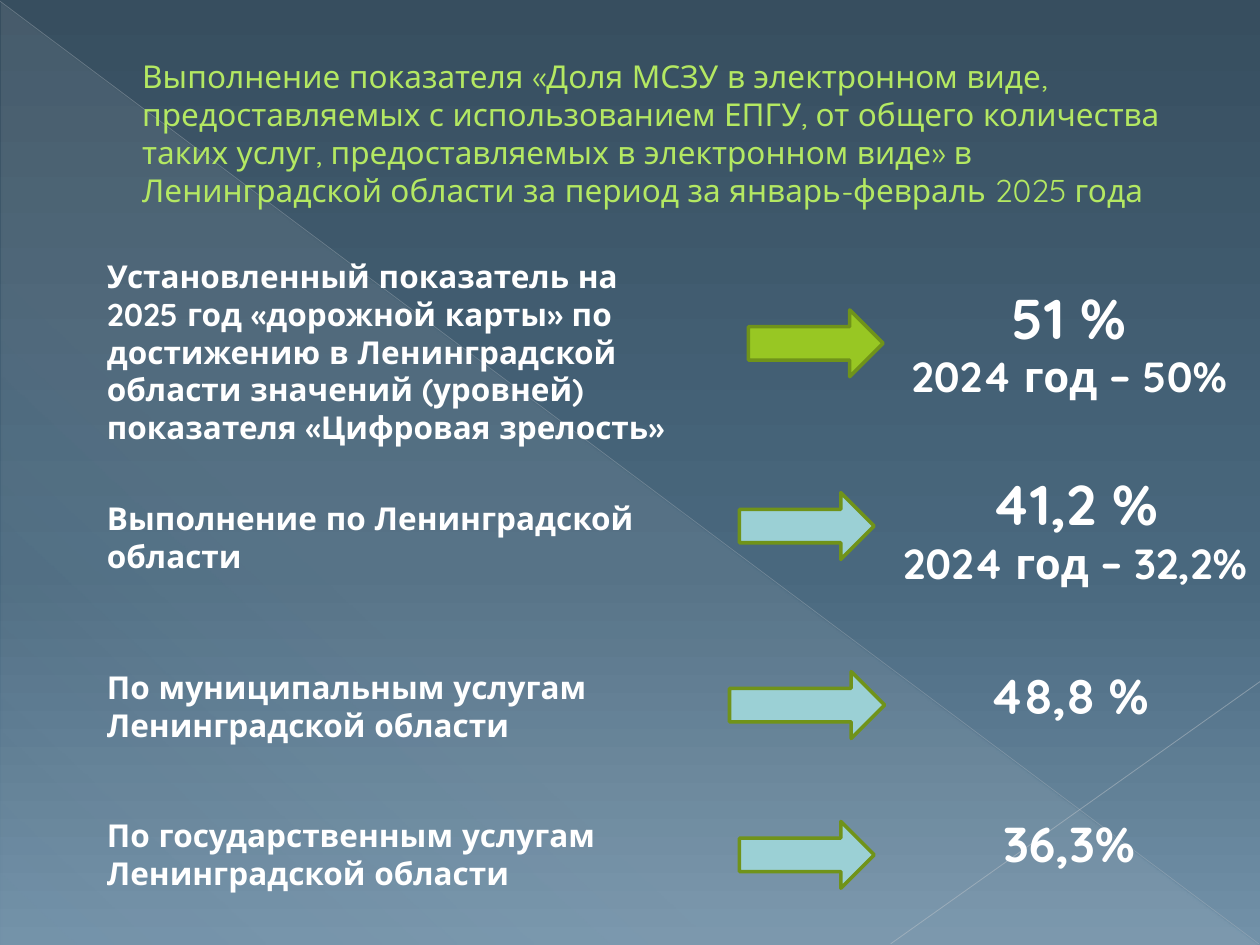
"""Build the slide on the share of e-services in the region."""
from lxml.etree import SubElement as Sub
from pptx import Presentation
from pptx.dml.color import RGBColor as RGB
from pptx.enum.shapes import MSO_CONNECTOR as Link, MSO_SHAPE as Kind
from pptx.enum.text import MSO_ANCHOR as Anchor, MSO_AUTO_SIZE as Fit, PP_ALIGN as Align
from pptx.oxml.ns import qn
from pptx.util import Pt

FONT = "Quicksand"
WHITE, LIME = RGB(255, 255, 255), RGB(0xB4, 0xE8, 0x62)
GREEN, AQUA = RGB(0x98, 0xC7, 0x23), RGB(0x9B, 0xD0, 0xD5)
OLIVE, MOSS = RGB(0x70, 0x93, 0x1A), RGB(0x69, 0x8A, 0x18)
DARK, STEEL, SKY = RGB(0x37, 0x4E, 0x5F), RGB(0x49, 0x68, 0x7E), RGB(0x72, 0x91, 0xA8)
MIST, GREY, PALE = RGB(0xE7, 0xEC, 0xED), RGB(0xBA, 0xC0, 0xC6), RGB(0xC2, 0xC7, 0xCC)

TITLE = ("Выполнение показателя «Доля МСЗУ в электронном виде, предоставляемых "
         "с использованием ЕПГУ, от общего количества таких услуг, предоставляемых "
         "в электронном виде» в Ленинградской области за период за январь-февраль 2025 года")
BACK = [(0, DARK, 100), (60, STEEL, 100), (100, SKY, 100)]
SHINE = [(0, MIST, 10), (70, MIST, 8), (100, MIST, 1)]
LINES = [((0, 0.7, 719.3, 539.3), GREY, 0.39, 35),
         ((720, 389.5, 509, 539.3), PALE, 0.47, 45)]
ROWS = [
    ("Установленный показатель на 2025 год «дорожной карты» по достижению в "
     "Ленинградской области значений (уровней) показателя «Цифровая зрелость»",
     (54, 143.3, 339.8, 116.6), (427.7, 177.1, 77), GREEN,
     [("51 %", 32), ("2024 год – 50%", 24)], (504.7, 158.4, 212.4, 74.9)),
    ("Выполнение по Ленинградской области",
     (54, 281.5, 317.5, 51.1), (422.6, 281.5, 77), AQUA,
     [("41,2 %", 32), ("2024 год – 32,2%", 24)], (506.2, 265, 216, 113.8)),
    ("По муниципальным услугам Ленинградской области",
     (54, 378, 317.5, 51.1), (416.9, 383.8, 88.6), AQUA,
     [("48,8 %", 28)], (504.7, 376.6, 212.4, 41)),
    ("По государственным услугам Ленинградской области",
     (54, 463, 311.8, 51.1), (422.6, 469.4, 77), AQUA,
     [("36,3%", 28)], (504.7, 461.5, 212.4, 74.9)),
]


def pts(box):
    return [Pt(v) for v in box]


def tint(node, color, alpha):
    clr = Sub(node, qn("a:srgbClr"), val=str(color))
    if alpha < 100:
        Sub(clr, qn("a:alpha"), val=str(alpha * 1000))


def blend(root, stops, angle):
    old = root.find(".//" + qn("a:solidFill"))
    old.tag
    home = old.getparent()
    grad = Sub(home, qn("a:gradFill"), rotWithShape="1")
    home.replace(old, grad)
    group = Sub(grad, qn("a:gsLst"))
    for pos, color, alpha in stops:
        tint(Sub(group, qn("a:gs"), pos=str(pos * 1000)), color, alpha)
    Sub(grad, qn("a:lin"), ang=str(angle * 60000), scaled="0")


def add_line(slide, ends, color, width, alpha):
    line = slide.shapes.add_connector(Link.STRAIGHT, *pts(ends))
    line.line.width = Pt(width)
    line.line.color.rgb = color
    props = line._element.spPr
    clr = props.find(".//" + qn("a:srgbClr"))
    Sub(clr, qn("a:alpha"), val=str(alpha * 1000))
    Sub(props, qn("a:effectLst"))


def add_form(slide, kind, box, color):
    form = slide.shapes.add_shape(kind, *pts(box))
    form.shadow.inherit = False
    form.fill.solid()
    form.fill.fore_color.rgb = color
    return form


def add_text(slide, box, items, color=WHITE, bold=True, align=Align.LEFT):
    frame = slide.shapes.add_textbox(*pts(box)).text_frame
    frame.word_wrap = True
    frame.text = "\n".join(text for text, size in items)
    for para, (text, size) in zip(frame.paragraphs, items):
        para.alignment = align
        font = para.runs[0].font
        font.name, font.size, font.bold = FONT, Pt(size), bold
        font.color.rgb = color
    return frame


def add_title(slide):
    frame = add_text(slide, (36, 20.9, 648, 110.2), [(TITLE, 18)], LIME, False)
    frame.vertical_anchor = Anchor.MIDDLE
    para = frame.paragraphs[0]
    props = para._p.get_or_add_pPr()
    props.set("marL", str(Pt(38.2)))
    props.set("indent", "0")
    look = para.runs[0]._r.get_or_add_rPr()
    edge = Sub(look, qn("a:ln"), w=str(Pt(0.5)))
    tint(Sub(edge, qn("a:solidFill")), MOSS, 100)
    look.insert(0, edge)


def main():
    deck = Presentation()
    deck.slide_width, deck.slide_height = Pt(720), Pt(540)
    slide = deck.slides.add_slide(deck.slide_layouts[6])
    slide.background.fill.solid()
    slide.background.fill.fore_color.rgb = DARK
    blend(slide._element, BACK, 90)

    shine = add_form(slide, Kind.RIGHT_TRIANGLE, (0.7, 1.4, 718.6, 538.6), MIST)
    shine.line.fill.background()
    blend(shine._element, SHINE, 133)
    for line in LINES:
        add_line(slide, *line)
    add_title(slide)

    for label, place, (left, top, width), color, values, spot in ROWS:
        add_text(slide, place, [(label, 18)]).auto_size = Fit.SHAPE_TO_FIT_TEXT
        arrow = add_form(slide, Kind.RIGHT_ARROW, (left, top, width, 38.2), color)
        arrow.line.color.rgb = OLIVE
        arrow.line.width = Pt(2)
        frame = add_text(slide, spot, values, align=Align.CENTER)
        frame.auto_size = Fit.SHAPE_TO_FIT_TEXT
    deck.save("out.pptx")


if __name__ == "__main__":
    main()
